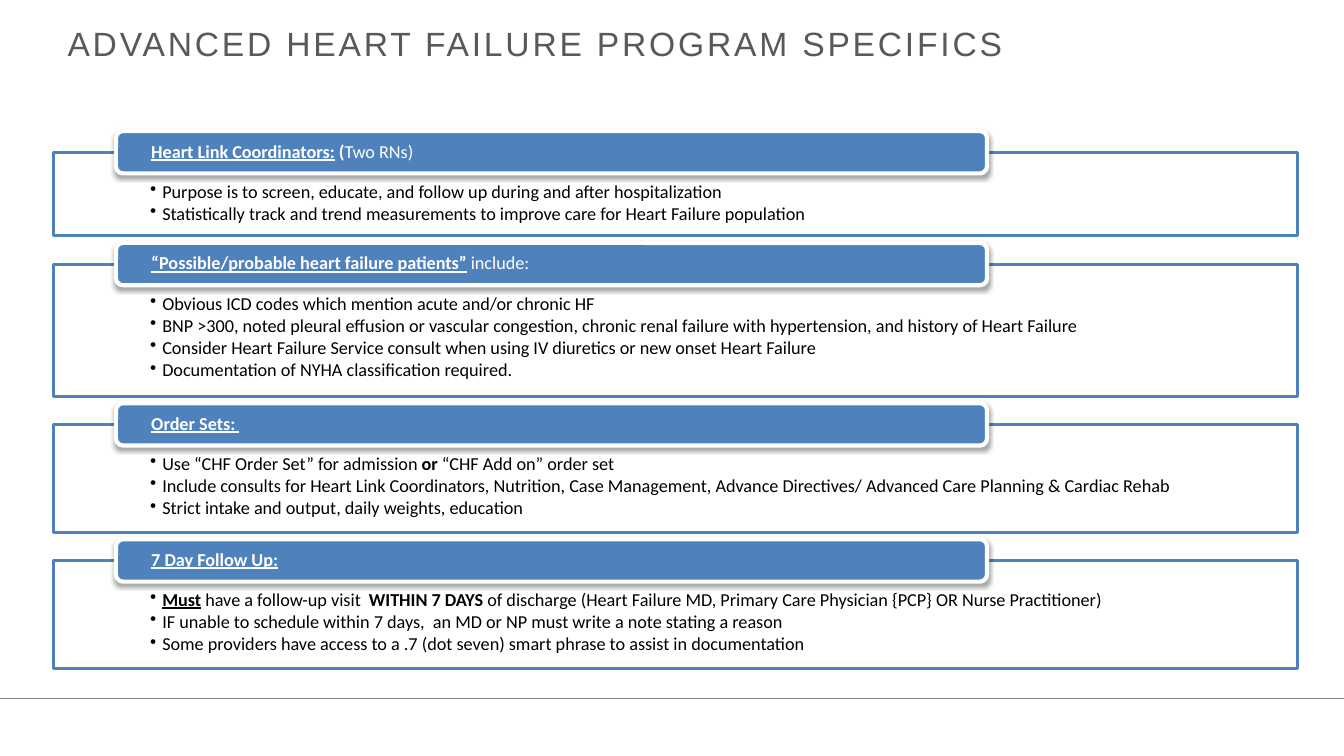
from lxml import etree
from pptx import Presentation
from pptx.dml.color import RGBColor
from pptx.enum.shapes import MSO_CONNECTOR, MSO_SHAPE
from pptx.enum.text import MSO_ANCHOR, PP_ALIGN
from pptx.oxml import parse_xml
from pptx.oxml.ns import nsdecls, qn
from pptx.util import Inches, Pt

RECT, ROUND = MSO_SHAPE.RECTANGLE, MSO_SHAPE.ROUNDED_RECTANGLE
STRAIGHT = MSO_CONNECTOR.STRAIGHT
TOP, MIDDLE, LEFT = MSO_ANCHOR.TOP, MSO_ANCHOR.MIDDLE, PP_ALIGN.LEFT
BLUE = RGBColor(0x4F, 0x81, 0xBD)
WHITE = RGBColor(0xFF, 0xFF, 0xFF)
BLACK = RGBColor(0, 0, 0)
TITLE_GREY = RGBColor(0x59, 0x59, 0x59)
RULE_GREY = RGBColor(0x80, 0x80, 0x80)

TITLE = "ADVANCED HEART FAILURE PROGRAM SPECIFICS"
# Each paragraph is a list of (text, style) runs: b is bold, u is underlined.
SECTIONS = [
    ([("Heart Link Coordinators:", "bu"), (" (", "b"), ("Two RNs)", "")], [
        [("Purpose is to screen, educate, and follow up during and after hospitalization", "")],
        [("Statistically track and trend measurements to improve care for Heart Failure population", "")],
    ]),
    ([("“Possible/probable heart failure patients”", "bu"), (" include:", "")], [
        [("Obvious ICD codes which mention acute and/or chronic HF", "")],
        [("BNP >300, noted pleural effusion or vascular congestion, chronic renal failure "
          "with hypertension, and history of Heart Failure", "")],
        [("Consider Heart Failure Service consult when using IV diuretics or new onset Heart Failure", "")],
        [("Documentation of NYHA classification required.", "")],
    ]),
    ([("Order Sets: ", "bu")], [
        [("Use “CHF Order Set” for admission ", ""), ("or", "b"), (" “CHF Add on” order set", "")],
        [("Include consults for Heart Link Coordinators, Nutrition, Case Management, "
          "Advance Directives/ Advanced Care Planning & Cardiac Rehab", "")],
        [("Strict intake and output, daily weights, education", "")],
    ]),
    ([("7 Day Follow Up:", "bu")], [
        [("Must", "bu"), (" have a follow-up visit  ", ""), ("WITHIN 7 DAYS ", "b"),
         ("of discharge (Heart Failure MD, Primary Care Physician {PCP} OR Nurse Practitioner)", "")],
        [("IF unable to schedule within 7 days,  an MD or NP must write a note stating a reason", "")],
        [("Some providers have access to a .7 (dot seven) smart phrase to assist in documentation", "")],
    ]),
]

PANEL_LEFT, PANEL_WIDTH, FIRST_TOP = 0.53, 12.34, 1.51
PANEL_BASE, BULLET_ROW, PANEL_GAP = 0.35, 0.24, 0.28
TAB_LEFT, TAB_WIDTH, TAB_HEIGHT = 1.15, 8.64, 0.42


def add_box(slide, kind, box, fill, line, weight):
    sp = slide.shapes.add_shape(kind, *(Inches(v) for v in box))
    sp.shadow.inherit = False
    sp.fill.solid()
    sp.fill.fore_color.rgb = fill
    sp.line.color.rgb = line
    sp.line.width = Pt(weight)
    return sp


def set_frame(tf, insets, anchor):
    tf.word_wrap = True
    tf.vertical_anchor = anchor
    tf.margin_left, tf.margin_top, tf.margin_right, tf.margin_bottom = (
        Inches(v) for v in insets)


def add_runs(p, runs, color):
    p.alignment = LEFT
    p.line_spacing = 0.9
    for text, style in runs:
        r = p.add_run()
        r.text = text
        r.font.name, r.font.size = "Calibri", Pt(13)
        r.font.color.rgb = color
        r.font.bold = "b" in style
        r.font.underline = "u" in style


def add_bullet(p):
    p.level = 1
    pPr = p._p.get_or_add_pPr()
    pPr.set("marL", str(Inches(0.12)))
    pPr.set("indent", str(-Inches(0.12)))
    p.space_after = Pt(1.8)
    etree.SubElement(pPr, qn("a:buChar"), char="•")


def add_panel(slide, top, height, bullets):
    sp = add_box(slide, RECT, (PANEL_LEFT, top, PANEL_WIDTH, height), WHITE, BLUE, 2)
    fill_color = sp.fill._xPr.find(qn("a:solidFill"))[0]
    etree.SubElement(fill_color, qn("a:alpha"), val="90000")
    tf = sp.text_frame
    set_frame(tf, (0.96, 0.3, 0.96, 0.1), TOP)
    for i, runs in enumerate(bullets):
        p = tf.add_paragraph() if i else tf.paragraphs[0]
        add_runs(p, runs, BLACK)
        add_bullet(p)


def add_tab(slide, top, heading):
    sp = add_box(slide, ROUND, (TAB_LEFT, top, TAB_WIDTH, TAB_HEIGHT), BLUE, WHITE, 3)
    sp._element.spPr.find(qn("a:effectLst")).append(parse_xml(
        f'<a:outerShdw {nsdecls("a")} blurRad="{Pt(3)}" dist="{Pt(1.8)}" dir="5400000" '
        'rotWithShape="0"><a:srgbClr val="000000"><a:alpha val="35000"/></a:srgbClr>'
        '</a:outerShdw>'))
    set_frame(sp.text_frame, (0.33, 0, 0.33, 0), MIDDLE)
    add_runs(sp.text_frame.paragraphs[0], heading, WHITE)


def add_title(slide):
    title = slide.shapes.title
    title.left, title.top, title.width, title.height = (
        Inches(v) for v in (0.67, 0.2, 12, 0.46))
    tf = title.text_frame
    tf.text = TITLE
    set_frame(tf, (0, 0, 0, 0), MIDDLE)
    p = tf.paragraphs[0]
    p.alignment = LEFT
    r = p.runs[0]
    r.font.name, r.font.size = "Arial", Pt(24)
    r.font.color.rgb = TITLE_GREY
    r._r.get_or_add_rPr().set("spc", "200")


def add_footer_rule(slide, width):
    rule = slide.shapes.add_connector(STRAIGHT, 0, Inches(6.93), width, Inches(6.93))
    rule.line.color.rgb = RULE_GREY
    rule.line.width = Pt(1)
    etree.SubElement(rule._element.spPr, qn("a:effectLst"))


def main():
    prs = Presentation()
    prs.slide_width, prs.slide_height = Inches(13.33), Inches(7.5)
    slide = prs.slides.add_slide(prs.slide_layouts[5])
    add_footer_rule(slide, prs.slide_width)
    add_title(slide)
    top = FIRST_TOP
    for heading, bullets in SECTIONS:
        height = PANEL_BASE + BULLET_ROW * len(bullets)
        add_panel(slide, top, height, bullets)
        add_tab(slide, top - TAB_HEIGHT / 2, heading)
        top += height + PANEL_GAP
    prs.save("out.pptx")


if __name__ == "__main__":
    main()
